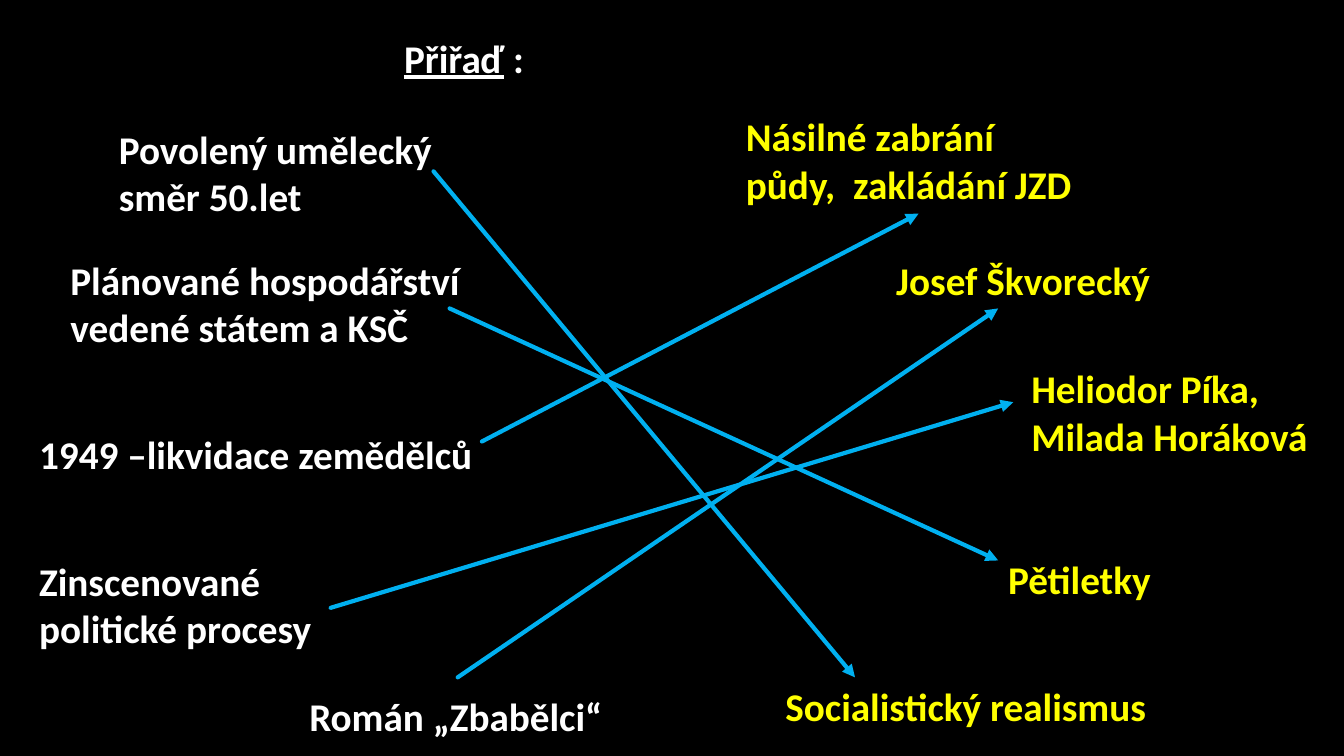
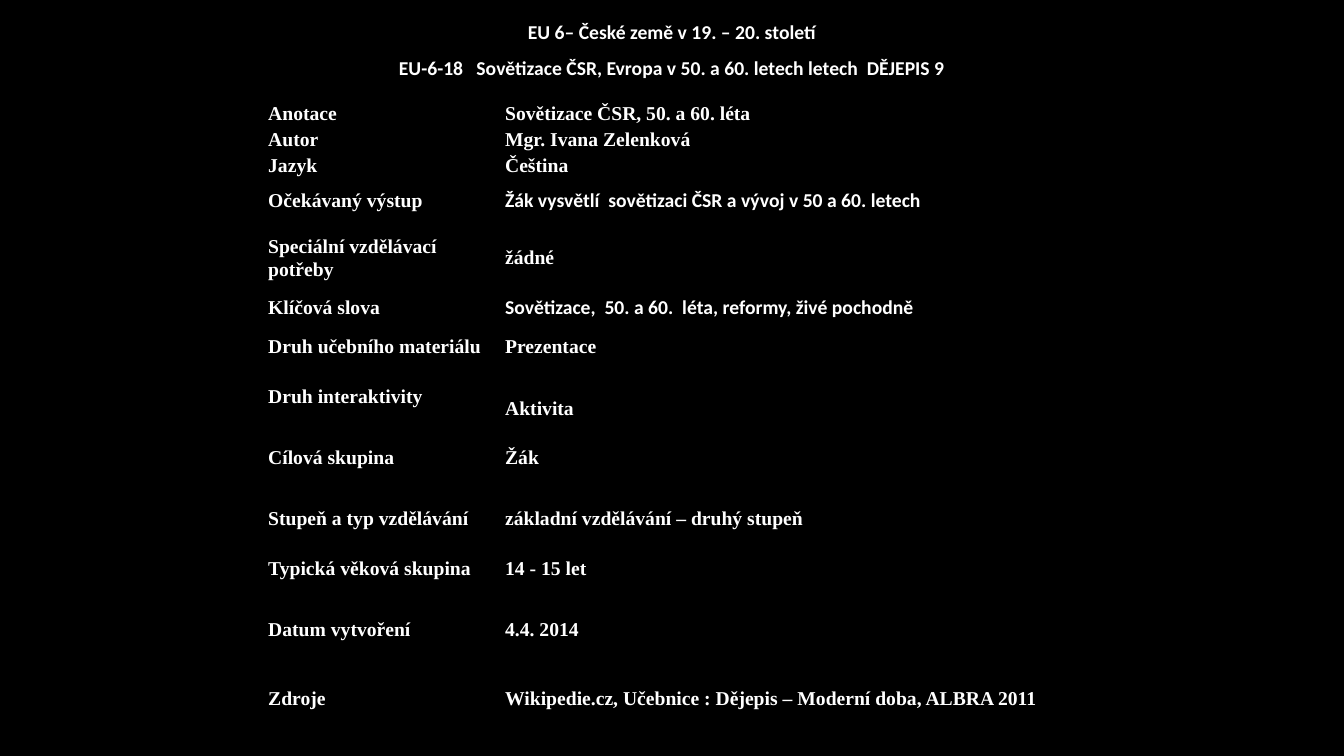
import pptx
import pptx.dml.color
import pptx.enum.shapes
import pptx.enum.text
import pptx.oxml.ns
import pptx.util
from lxml import etree
from pptx.util import Inches

BLACK = pptx.dml.color.RGBColor(0x00, 0x00, 0x00)
WHITE = pptx.dml.color.RGBColor(0xFF, 0xFF, 0xFF)
YELLOW = pptx.dml.color.RGBColor(0xFF, 0xFF, 0x00)
BLUE = pptx.dml.color.RGBColor(0x00, 0xB0, 0xF0)
SANS = "Calibri"
SERIF = "Times New Roman"
qn = pptx.oxml.ns.qn


def style(paragraph, size, color=WHITE, face=SANS):
    font = paragraph.font
    font.size = pptx.util.Pt(size)
    font.name = face
    font.bold = True
    font.color.rgb = color


def add_text(slide, left, top, width, height, lines, size, color=WHITE):
    """Add a wrapping text box, one paragraph per line, and return its paragraphs."""
    frame = slide.shapes.add_textbox(
        Inches(left), Inches(top), Inches(width), Inches(height)).text_frame
    frame.word_wrap = True
    frame.text = "\n".join(lines)
    for paragraph in frame.paragraphs:
        style(paragraph, size, color)
    return frame.paragraphs


deck = pptx.Presentation()
deck.slide_width = Inches(13.33)
deck.slide_height = Inches(7.5)
matching, annotation = [deck.slides.add_slide(deck.slide_layouts[6]) for _ in range(2)]
for slide in (matching, annotation):
    slide.background.fill.solid()
    slide.background.fill.fore_color.rgb = BLACK

# Slide 1: matching exercise
heading = add_text(matching, 3.91, 0.29, 2.52, 0.57, [""], 28)[0]
task = heading.add_run()
task.text = "Přiřaď"
task.font.underline = True
heading.add_run().text = " :"

ONE_LINE, TWO_LINES = 0.57, 1.04
clues = [
    (1.08, 1.19, 4.02, TWO_LINES, "Povolený umělecký směr 50.let"),
    (0.6, 2.49, 4.49, TWO_LINES, "Plánované hospodářství vedené státem a KSČ"),
    (0.29, 4.22, 4.8, ONE_LINE, "1949 –likvidace zemědělců"),
    (0.29, 5.48, 3.46, TWO_LINES, "Zinscenované politické procesy"),
    (2.97, 6.82, 3.46, ONE_LINE, "Román „Zbabělci“"),
]
answers = [
    (7.3, 1.07, 3.62, TWO_LINES, "Násilné zabrání půdy,  zakládání JZD"),
    (8.79, 2.49, 2.99, ONE_LINE, "Josef Škvorecký"),
    (10.13, 3.57, 3.15, TWO_LINES, "Heliodor Píka, Milada Horáková"),
    (9.9, 5.46, 2.05, ONE_LINE, "Pětiletky"),
    (7.69, 6.72, 4.09, ONE_LINE, "Socialistický realismus"),
]
for entries, color in ((clues, WHITE), (answers, YELLOW)):
    for left, top, width, height, text in entries:
        add_text(matching, left, top, width, height, [text], 28, color)

matches = [
    (4.3, 1.7, 8.48, 6.72),
    (4.46, 3.06, 9.9, 5.56),
    (4.78, 4.38, 9.11, 2.12),
    (3.28, 6.03, 10.05, 3.99),
    (4.54, 6.72, 9.9, 3.06),
]
for ends in matches:
    arrow = matching.shapes.add_connector(
        pptx.enum.shapes.MSO_CONNECTOR.STRAIGHT, *[Inches(end) for end in ends])
    arrow.line.color.rgb = BLUE
    arrow.line.width = pptx.util.Pt(3)
    properties = arrow._element.spPr
    outline = properties.find(qn("a:ln"))
    outline.set("cap", "rnd")
    etree.SubElement(outline, qn("a:tailEnd"), type="triangle")
    etree.SubElement(properties, qn("a:effectLst"))

# Slide 2: annotation sheet
# Row height, label, value, font of the value
details = [
    (0.26, "Anotace", "Sovětizace ČSR, 50. a 60. léta", SERIF),
    (0.26, "Autor", "Mgr. Ivana Zelenková", SERIF),
    (0.26, "Jazyk", "Čeština", SERIF),
    (0.43, "Očekávaný výstup",
     "Žák vysvětlí  sovětizaci ČSR a vývoj v 50 a 60. letech", SANS),
    (0.71, "Speciální vzdělávací potřeby", "žádné", SERIF),
    (0.26, "Klíčová slova",
     "Sovětizace,  50. a 60.  léta, reformy, živé pochodně", SANS),
    (0.5, "Druh učebního materiálu", "Prezentace", SERIF),
    (0.5, "Druh interaktivity", "Aktivita", SERIF),
    (0.71, "Cílová skupina", "Žák", SERIF),
    (0.5, "Stupeň a typ vzdělávání", "základní vzdělávání – druhý stupeň", SERIF),
    (0.5, "Typická věková skupina", "14 - 15 let", SERIF),
    (0.71, "Datum vytvoření", "4.4. 2014", SERIF),
    (0.66, "Zdroje",
     "Wikipedie.cz, Učebnice : Dějepis – Moderní doba, ALBRA 2011", SERIF),
]
sheet = annotation.shapes.add_table(
    len(details), 2, Inches(2.65), Inches(0.99), Inches(8.27),
    Inches(sum(detail[0] for detail in details))).table
sheet.first_row = False
sheet.horz_banding = False
sheet.columns[0].width = Inches(2.35)
sheet.columns[1].width = Inches(5.92)
for row, (height, label, value, face) in enumerate(details):
    sheet.rows[row].height = Inches(height)
    for column, (text, text_face) in enumerate(((label, SERIF), (value, face))):
        cell = sheet.cell(row, column)
        cell.text = text
        cell.vertical_anchor = pptx.enum.text.MSO_ANCHOR.MIDDLE
        cell.margin_left = cell.margin_right = Inches(0.01)
        cell.margin_top = cell.margin_bottom = Inches(0.01)
        paragraph = cell.text_frame.paragraphs[0]
        paragraph.line_spacing = 1.06
        style(paragraph, 14, face=text_face)
        borders = cell._tc.get_or_add_tcPr()
        for side in ("a:lnL", "a:lnR", "a:lnT", "a:lnB"):
            border = etree.SubElement(borders, qn(side), w=str(pptx.util.Pt(1)))
            paint = etree.SubElement(border, qn("a:solidFill"))
            etree.SubElement(paint, qn("a:srgbClr"), val=str(BLACK))
        cell.fill.background()
        if value == "Aktivita" and column == 1:
            cell.margin_top = Inches(0.25)

course_lines = [
    "EU 6– České země v\u00a019. – 20. století".replace("\u00a0", " "),
    "EU-6-18   Sovětizace ČSR, Evropa v 50. a 60. letech letech  DĚJEPIS 9",
]
for paragraph in add_text(annotation, 3.33, 0.13, 6.67, 0.72, course_lines, 14):
    paragraph.alignment = pptx.enum.text.PP_ALIGN.CENTER
    paragraph.line_spacing = 1.07
    paragraph.space_after = pptx.util.Pt(8)

deck.save("out.pptx")
